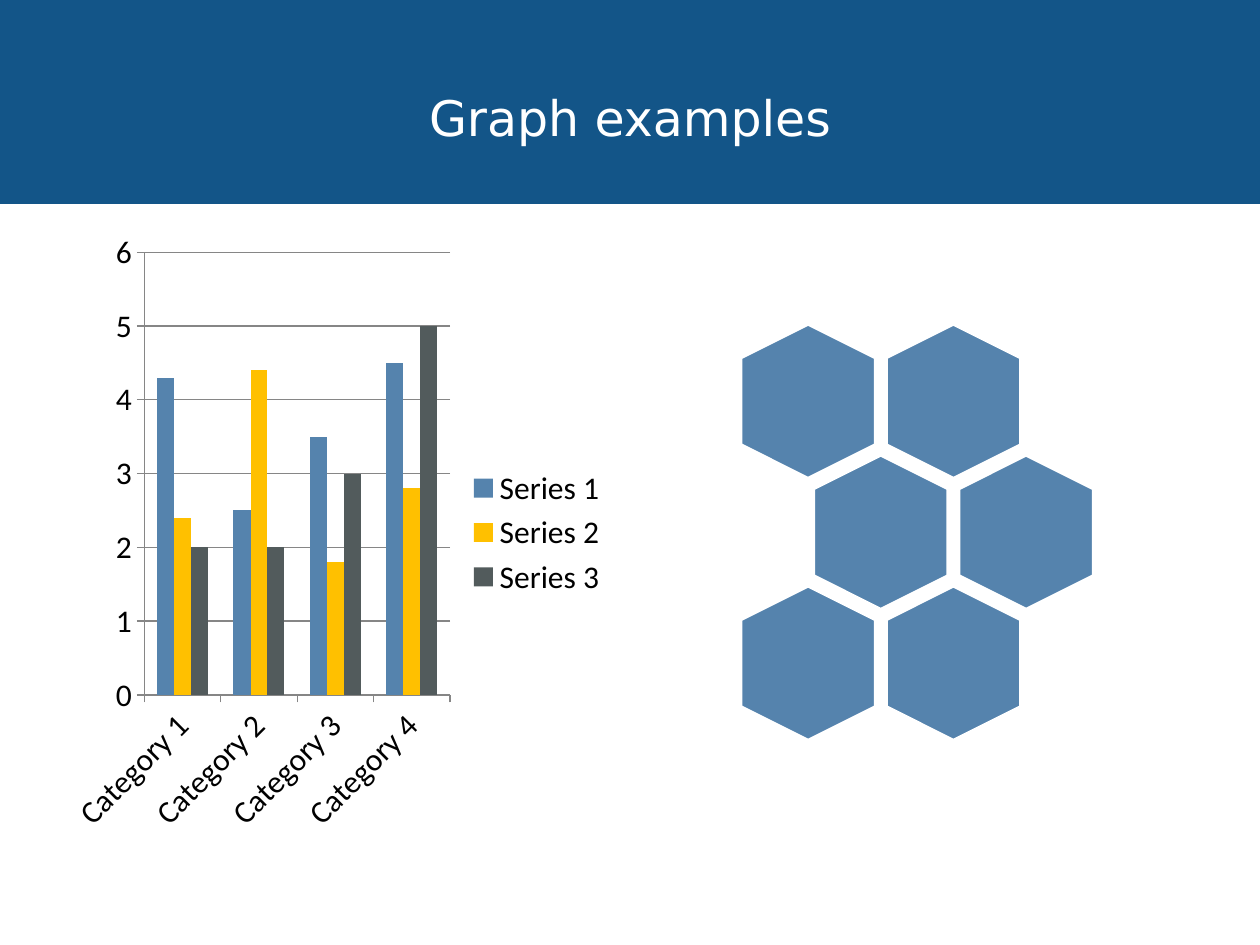
import pptx
import pptx.chart.data
import pptx.dml.color
import pptx.enum.chart
import pptx.enum.shapes
import pptx.enum.text
import pptx.util
from pptx.util import Cm, Pt

RGBColor = pptx.dml.color.RGBColor
NAVY = RGBColor(0x13, 0x55, 0x88)
STEEL = RGBColor(0x55, 0x83, 0xAD)
AMBER = RGBColor(0xFF, 0xC0, 0x00)
SLATE = RGBColor(0x52, 0x5B, 0x5C)
AXIS_GRAY = RGBColor(0x86, 0x86, 0x86)
WHITE = RGBColor(0xFF, 0xFF, 0xFF)
BLACK = RGBColor(0x00, 0x00, 0x00)

CATEGORIES = ["Category 1", "Category 2", "Category 3", "Category 4"]
SERIES = [
    ("Series 1", (4.3, 2.5, 3.5, 4.5), STEEL),
    ("Series 2", (2.4, 4.4, 1.8, 2.8), AMBER),
    ("Series 3", (2, 2, 3, 5), SLATE),
]


def set_attributes(target, values):
    for name, value in values.items():
        setattr(target, name, value)


def format_font(font, name, size, color):
    set_attributes(font, {"name": name, "size": Pt(size), "bold": False})
    font.color.rgb = color


def set_title(slide, text):
    title = slide.shapes.title
    set_attributes(title, {"left": Cm(1.27), "top": Cm(0.76),
                           "width": Cm(22.86), "height": Cm(3.18)})
    title.text_frame.text = text
    title.text_frame.vertical_anchor = pptx.enum.text.MSO_ANCHOR.MIDDLE
    paragraph = title.text_frame.paragraphs[0]
    paragraph.alignment = pptx.enum.text.PP_ALIGN.CENTER
    format_font(paragraph.runs[0].font, "DejaVu Sans", 28, WHITE)


def add_banner(slide):
    """Add the full-width band behind the title."""
    banner = slide.shapes.add_shape(
        pptx.enum.shapes.MSO_SHAPE.RECTANGLE, 0, 0, Cm(25.4), Cm(4.11))
    banner.shadow.inherit = False
    banner.fill.solid()
    banner.fill.fore_color.rgb = NAVY
    banner.line.fill.background()
    slide.shapes.title._element.addprevious(banner._element)


def add_column_chart(slide):
    chart_data = pptx.chart.data.CategoryChartData()
    chart_data.categories = CATEGORIES
    for name, values, _ in SERIES:
        chart_data.add_series(name, values)
    chart = slide.shapes.add_chart(
        pptx.enum.chart.XL_CHART_TYPE.COLUMN_CLUSTERED,
        Cm(1.27), Cm(4.45), Cm(11.23), Cm(12.57), chart_data).chart
    chart.has_title = False
    format_font(chart.font, "Calibri", 18, BLACK)

    chart.has_legend = True
    set_attributes(chart.legend, {
        "position": pptx.enum.chart.XL_LEGEND_POSITION.RIGHT,
        "include_in_layout": False,
    })

    columns = chart.plots[0]
    set_attributes(columns, {"gap_width": 150, "overlap": 0,
                             "vary_by_categories": False})
    for series, (_, _, color) in zip(columns.series, SERIES):
        series.format.fill.solid()
        series.format.fill.fore_color.rgb = color

    for axis in (chart.category_axis, chart.value_axis):
        set_attributes(axis, {
            "major_tick_mark": pptx.enum.chart.XL_TICK_MARK.OUTSIDE,
            "minor_tick_mark": pptx.enum.chart.XL_TICK_MARK.NONE,
        })
        axis.format.line.color.rgb = AXIS_GRAY
    set_attributes(chart.value_axis, {"minimum_scale": 0, "maximum_scale": 6,
                                      "major_unit": 1})
    chart.value_axis.major_gridlines.format.line.color.rgb = AXIS_GRAY


def add_hexagon(cluster, left, top):
    hexagon = cluster.shapes.add_shape(
        pptx.enum.shapes.MSO_SHAPE.HEXAGON, left, top, Cm(3.12), Cm(2.72))
    hexagon.rotation = 90
    hexagon.shadow.inherit = False
    hexagon.fill.solid()
    hexagon.fill.fore_color.rgb = STEEL
    hexagon.line.color.rgb = WHITE
    hexagon.line.width = Pt(2)


def add_honeycomb(slide):
    """Add three rows of two hexagons, the middle row shifted by half a step."""
    column_step, row_step = 2.93, 2.64
    cluster = slide.shapes.add_group_shape()
    for row in range(3):
        shift = column_step / 2 if row % 2 else 0
        for column in range(2):
            add_hexagon(cluster, Cm(14.73 + shift + column * column_step),
                        Cm(6.73 + row * row_step))


def main():
    presentation = pptx.Presentation()
    set_attributes(presentation, {"slide_width": Cm(25.4),
                                  "slide_height": Cm(19.05)})
    slide = presentation.slides.add_slide(presentation.slide_layouts[5])
    set_title(slide, "Graph examples")
    add_banner(slide)
    add_column_chart(slide)
    add_honeycomb(slide)
    presentation.save("out.pptx")


if __name__ == "__main__":
    main()
